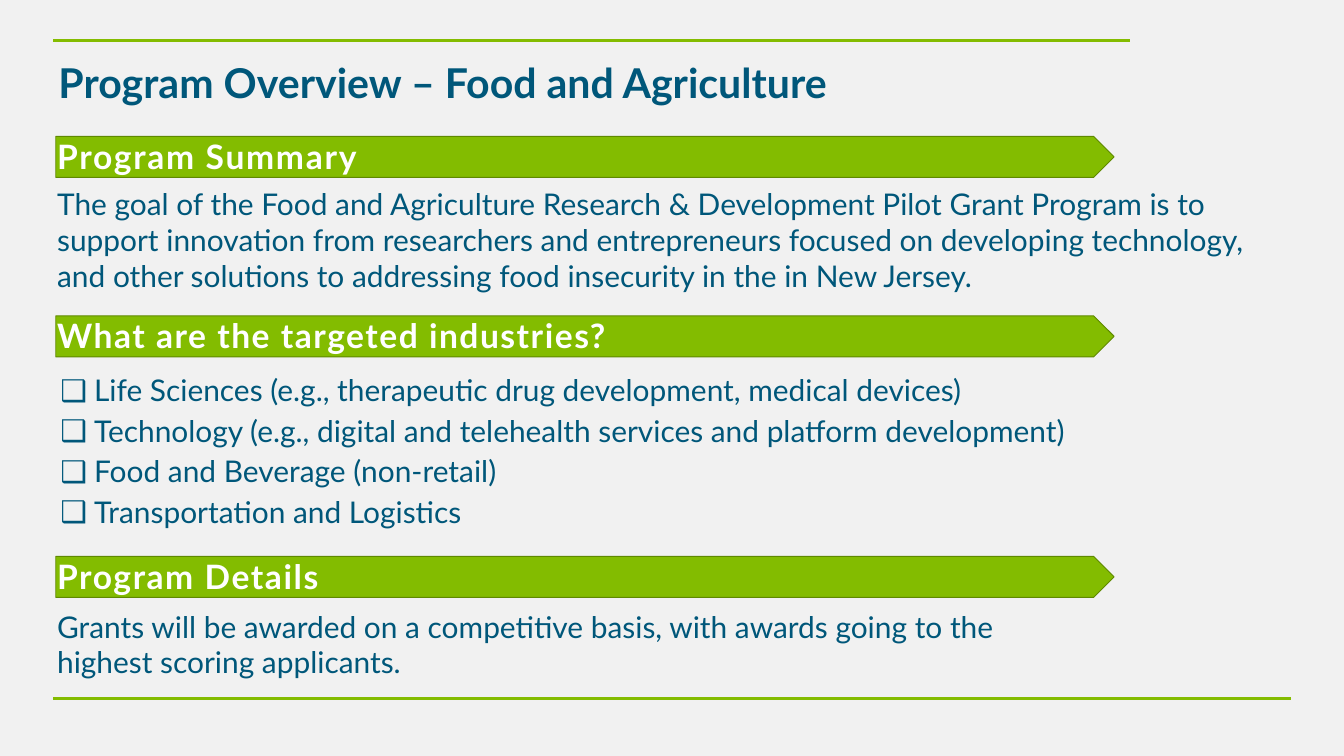
from dataclasses import dataclass

from lxml import etree
from pptx import Presentation
from pptx.dml.color import RGBColor
from pptx.enum.shapes import MSO_CONNECTOR, MSO_SHAPE
from pptx.enum.text import MSO_ANCHOR, MSO_AUTO_SIZE, PP_ALIGN
from pptx.oxml.ns import qn
from pptx.util import Inches, Pt

STRAIGHT = MSO_CONNECTOR.STRAIGHT
ARROW_BAR = MSO_SHAPE.PENTAGON
TOP = MSO_ANCHOR.TOP
LEFT = PP_ALIGN.LEFT
NO_AUTOFIT = MSO_AUTO_SIZE.NONE


@dataclass(frozen=True)
class Theme:
    font: str = "Lato"
    background: RGBColor = RGBColor(0xF1, 0xF1, 0xF1)
    rule: RGBColor = RGBColor(0x84, 0xBC, 0x00)
    bar: RGBColor = RGBColor(0x83, 0xBC, 0x00)
    bar_edge: RGBColor = RGBColor(0x5F, 0x89, 0x00)
    ink: RGBColor = RGBColor(0x00, 0x57, 0x7A)
    heading_ink: RGBColor = RGBColor(0xFF, 0xFF, 0xFF)
    title_size: int = 44
    heading_size: int = 36
    body_size: int = 32


THEME = Theme()

TITLE = "Program Overview – Food and Agriculture"
SUMMARY = (
    "The goal of the Food and Agriculture Research & Development Pilot Grant "
    "Program is to support innovation from researchers and entrepreneurs focused "
    "on developing technology, and other solutions to addressing food insecurity "
    "in the in New Jersey."
)
INDUSTRIES = [
    "Life Sciences (e.g., therapeutic drug development, medical devices)",
    "Technology (e.g., digital and telehealth services and platform development)",
    "Food and Beverage (non-retail)",
    "Transportation and Logistics",
]
DETAILS = [
    "Grants will be awarded on a competitive basis, with awards going to the",
    "highest scoring applicants.",
]
BAR_TOPS = [2.03, 4.7, 8.28]
RULES = [(0.6, 16.81), (10.4, 19.21)]  # height on the slide, right end


def add_rule(slide, y, right):
    rule = slide.shapes.add_connector(
        STRAIGHT, Inches(0.79), Inches(y), Inches(right), Inches(y))
    rule.line.color.rgb = THEME.rule
    rule.line.width = Pt(3)
    etree.SubElement(rule._element.spPr, qn("a:effectLst"))


def add_heading_bar(slide, top):
    bar = slide.shapes.add_shape(
        ARROW_BAR, Inches(0.83), Inches(top), Inches(15.75), Inches(0.61))
    bar.shadow.inherit = False
    bar.fill.solid()
    bar.fill.fore_color.rgb = THEME.bar
    bar.line.color.rgb = THEME.bar_edge
    bar.line.width = Pt(1)


def place_text(placeholder, left, top, width, height, inset_top):
    """Move a placeholder and return its text frame, ready to fill."""
    placeholder.left, placeholder.top = Inches(left), Inches(top)
    placeholder.width, placeholder.height = Inches(width), Inches(height)
    frame = placeholder.text_frame
    frame.margin_left = frame.margin_right = frame.margin_bottom = 0
    frame.margin_top = Inches(inset_top)
    frame.vertical_anchor = TOP
    frame.word_wrap = True
    frame.auto_size = NO_AUTOFIT
    return frame


def add_run(paragraph, text, size, color, bold=False, tracking=0):
    run = paragraph.add_run()
    run.text = text
    run.font.name = THEME.font
    run.font.size = Pt(size)
    run.font.bold = bold
    run.font.color.rgb = color
    if tracking:
        run.font._element.set("spc", str(round(tracking * 100)))


def add_paragraph(frame, space_before, indent=0.02, hanging=0, bullet=None):
    first = frame.paragraphs[0]
    paragraph = frame.add_paragraph() if first.runs else first
    properties = paragraph._p.get_or_add_pPr()
    properties.set("marL", str(Inches(indent)))
    properties.set("indent", str(-Inches(hanging)))
    if bullet:
        etree.SubElement(properties, qn("a:buFont"), typeface=THEME.font)
        etree.SubElement(properties, qn("a:buChar"), char=bullet)
    else:
        etree.SubElement(properties, qn("a:buNone"))
    paragraph.alignment = LEFT
    paragraph.line_spacing = 1.0
    paragraph.space_before = Pt(space_before)
    return paragraph


def add_heading(frame, text, space_before, tracking):
    add_run(add_paragraph(frame, space_before), text, THEME.heading_size,
            THEME.heading_ink, bold=True, tracking=tracking)


def add_body(frame, lines, space_before):
    paragraph = add_paragraph(frame, space_before)
    for number, line in enumerate(lines):
        if number:
            paragraph.add_line_break()
        add_run(paragraph, line, THEME.body_size, THEME.ink)


def add_bullets(frame, items, first_space, space):
    for number, item in enumerate(items):
        paragraph = add_paragraph(frame, space if number else first_space,
                                  indent=0.57, hanging=0.5, bullet="❑")
        add_run(paragraph, item, THEME.body_size, THEME.ink)


def main():
    presentation = Presentation()
    presentation.slide_width = Inches(20)
    presentation.slide_height = Inches(11.25)
    slide = presentation.slides.add_slide(presentation.slide_layouts[1])
    slide.background.fill.solid()
    slide.background.fill.fore_color.rgb = THEME.background

    # Rules and heading bars
    for y, right in RULES:
        add_rule(slide, y, right)
    for top in BAR_TOPS:
        add_heading_bar(slide, top)

    # Title
    title = place_text(slide.shapes.title, 0.87, 0.72, 18.25, 1.03, 0.14)
    add_run(add_paragraph(title, 0, indent=0), TITLE, THEME.title_size,
            THEME.ink, bold=True)

    # Body, brought in front of the bars that carry its headings
    body = slide.placeholders[1]
    slide.shapes._spTree.append(body._element)
    sections = place_text(body, 0.83, 1.84, 18.19, 8.29, 0.18)
    add_heading(sections, "Program Summary", 0, 1.85)
    add_body(sections, [SUMMARY], 10.6)
    add_heading(sections, "What are the targeted industries?", 22.8, 1.65)
    add_bullets(sections, INDUSTRIES, 17.8, 5)
    add_heading(sections, "Program Details", 28.6, 1.7)
    add_body(sections, DETAILS, 12.9)

    presentation.save("out.pptx")


if __name__ == "__main__":
    main()
